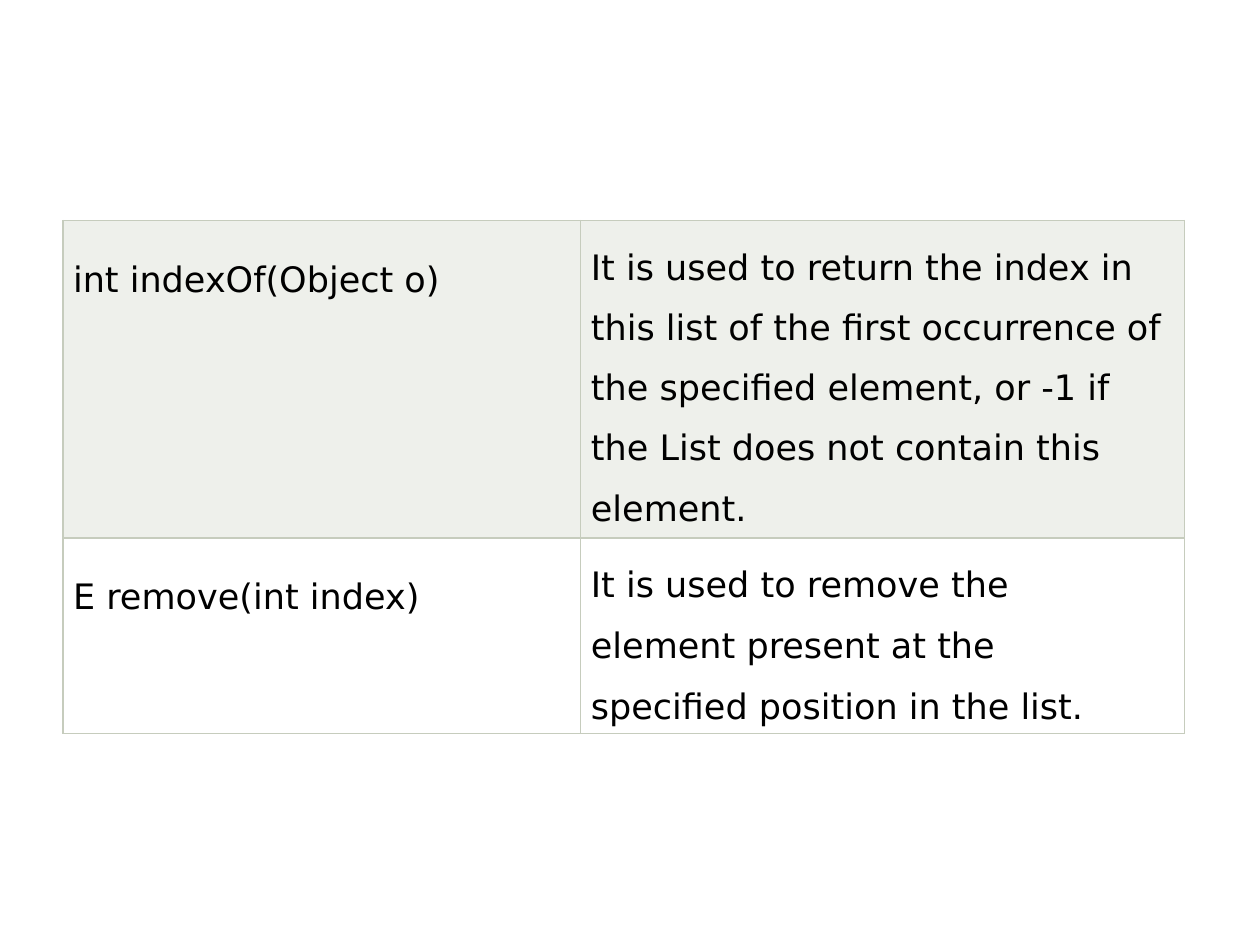
import pptx
import pptx.dml.color
import pptx.oxml
import pptx.oxml.ns
import pptx.util

Inches, Pt = pptx.util.Inches, pptx.util.Pt

FONT, TEXT_SIZE = "DejaVu Sans", 20
TEXT_COLOR, BORDER_COLOR, SHADE = "000000", "C6CCBD", "EEF0EB"
LEFT, TOP, INDENT = 0.5, 1.75, 0.08
COLUMN_WIDTHS = (4.11, 4.79)
SIGNATURE_TOP = 0.31

METHODS = [
    {
        "signature": "int indexOf(Object o)",
        "description": "It is used to return the index in this list of the first "
                       "occurrence of the specified element, or -1 if the List "
                       "does not contain this element.",
        "height": 2.52, "fill": SHADE, "top": 0.06, "right": 0.1, "spacing": 1.48,
    },
    {
        "signature": "E remove(int index)",
        "description": "It is used to remove the element present at the "
                       "specified position in the list.",
        "height": 1.55, "fill": None, "top": 0.05, "right": 0.4, "spacing": 1.5,
    },
]


def rgb(value):
    return pptx.dml.color.RGBColor.from_string(value)


def add_borders(cell):
    properties = cell._tc.get_or_add_tcPr()
    for position, side in enumerate(("lnL", "lnR", "lnT", "lnB")):
        properties.insert(position, pptx.oxml.parse_xml(
            f'<a:{side} {pptx.oxml.ns.nsdecls("a")} w="{Pt(0.75)}"><a:solidFill>'
            f'<a:srgbClr val="{BORDER_COLOR}"/></a:solidFill></a:{side}>'))


def fill_cell(cell, text, fill, top, right=0, spacing=1):
    cell.margin_left, cell.margin_right = Inches(INDENT), Inches(right)
    cell.margin_top, cell.margin_bottom = Inches(top), 0
    if fill:
        cell.fill.solid()
        cell.fill.fore_color.rgb = rgb(fill)
    else:
        cell.fill.background()
    add_borders(cell)
    para = cell.text_frame.paragraphs[0]
    para.line_spacing = spacing
    span = para.add_run()
    span.text = text
    span.font.name, span.font.size = FONT, Pt(TEXT_SIZE)
    span.font.color.rgb = rgb(TEXT_COLOR)


deck = pptx.Presentation()
deck.slide_width, deck.slide_height = Inches(10), Inches(7.5)
page = deck.slides.add_slide(deck.slide_layouts[6])

table = page.shapes.add_table(
    len(METHODS), len(COLUMN_WIDTHS), Inches(LEFT), Inches(TOP),
    Inches(sum(COLUMN_WIDTHS)), Inches(sum(m["height"] for m in METHODS))).table
table.first_row = table.horz_banding = False
for column, width in zip(table.columns, COLUMN_WIDTHS):
    column.width = Inches(width)
for row, method in zip(table.rows, METHODS):
    row.height = Inches(method["height"])
    signature, description = row.cells
    fill_cell(signature, method["signature"], method["fill"], SIGNATURE_TOP)
    fill_cell(description, method["description"], method["fill"],
              method["top"], method["right"], method["spacing"])

deck.save("out.pptx")
